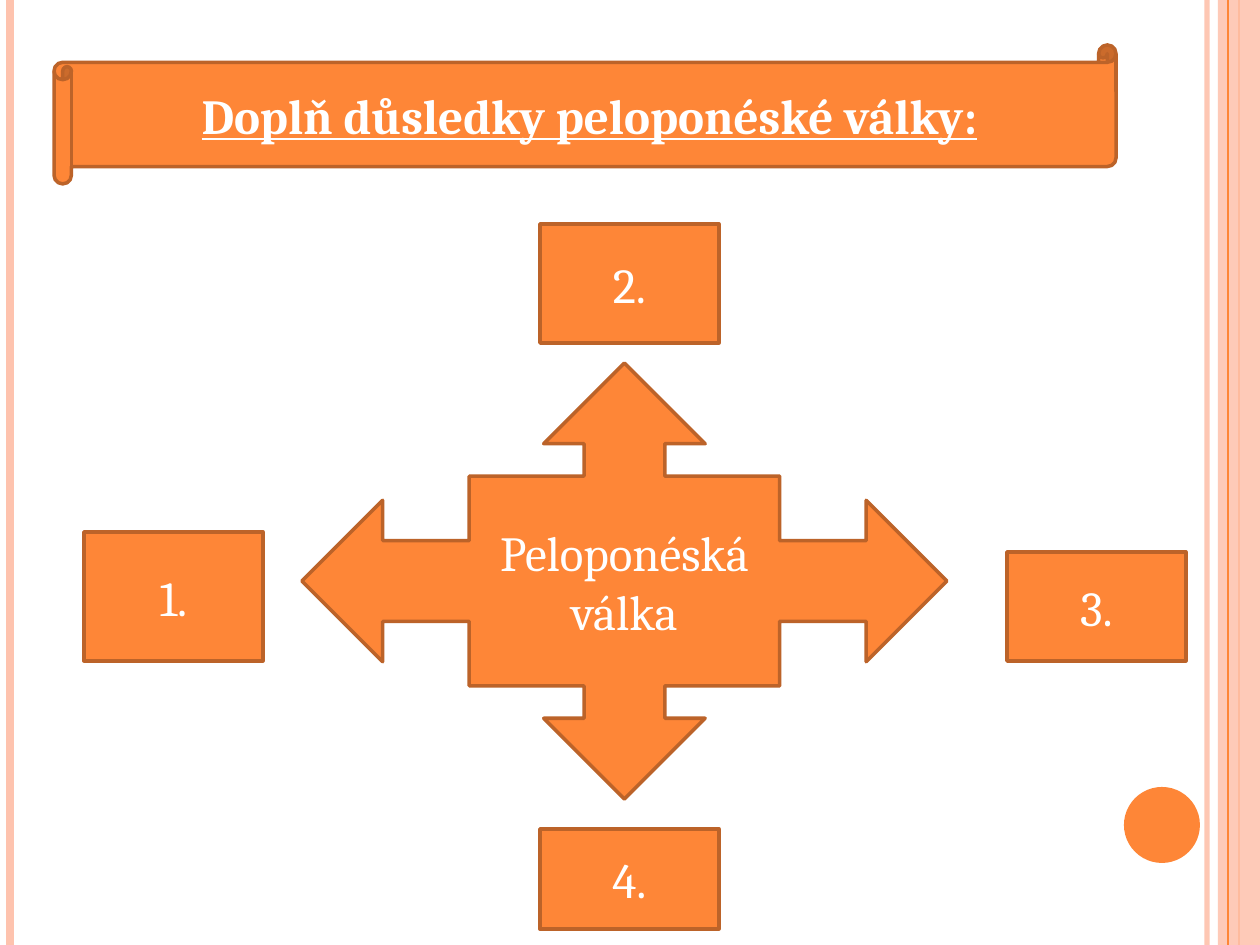
from lxml import etree
from pptx import Presentation, util as u
from pptx.dml.color import RGBColor
from pptx.enum import shapes as s, text as t
from pptx.oxml.ns import qn

PX = 914400 / 126
WIDE, HIGH = 1260, 945
ORANGE = RGBColor(0xFE, 0x86, 0x37)
BROWN = RGBColor(0xBC, 0x63, 0x29)
PEACH = RGBColor(0xFE, 0xC3, 0xAE)
WHITE = RGBColor(0xFF, 0xFF, 0xFF)
KIND = s.MSO_SHAPE

deck = Presentation()
deck.slide_width, deck.slide_height = round(WIDE * PX), round(HIGH * PX)
slide = deck.slides.add_slide(deck.slide_layouts[6])


def shape(kind, box, fill):
    item = slide.shapes.add_shape(kind, *[round(n * PX) for n in box])
    item.shadow.inherit = False
    item.fill.solid()
    item.fill.fore_color.rgb = fill
    item.line.fill.background()
    return item


def fade(part, cent):
    color = next(part.iter(qn("a:srgbClr")))
    etree.SubElement(color, qn("a:alpha")).set("val", str(cent * 1000))


# Side stripes, back to front, with the band between the lines
for x, color, size, cent in [
    (1207, PEACH, 3, 93),
    (10, PEACH, 4.5, 100),
    (1239, ORANGE, 1.5, 100),
    (1228, ORANGE, 0.75, 100),
]:
    if x == 1228:
        band = shape(KIND.RECTANGLE, (1218, 0, 42, HIGH), PEACH)
        fade(band.fill._xPr, 87)
    left = round(x * PX)
    line = slide.shapes.add_connector(
        s.MSO_CONNECTOR.STRAIGHT, left, 0, left, deck.slide_height)
    line.line.color.rgb = color
    line.line.width = u.Pt(size)
    props = line._element.spPr
    if cent < 100:
        fade(props, cent)
    etree.SubElement(props, qn("a:effectLst"))

# Corner dot
shape(KIND.OVAL, (1124, 787, 76, 76), ORANGE)

# Title scroll, central arrows and numbered boxes
for kind, box, words, head in [
    (KIND.HORIZONTAL_SCROLL, (54, 45, 1062, 139),
     "Doplň důsledky peloponéské války:", True),
    (KIND.QUAD_ARROW_CALLOUT, (302, 363, 645, 436), "Peloponéská válka", False),
    (KIND.RECTANGLE, (84, 532, 179, 129), "1.", False),
    (KIND.RECTANGLE, (540, 224, 179, 119), "2.", False),
    (KIND.RECTANGLE, (1007, 552, 179, 109), "3.", False),
    (KIND.RECTANGLE, (540, 829, 179, 100), "4.", False),
]:
    item = shape(kind, box, ORANGE)
    item.line.color.rgb = BROWN
    item.line.width = u.Pt(2)
    frame = item.text_frame
    frame.word_wrap = True
    frame.vertical_anchor = t.MSO_ANCHOR.MIDDLE
    para = frame.paragraphs[0]
    para.alignment = t.PP_ALIGN.CENTER
    run = para.add_run()
    run.text = words
    font = run.font
    font.name, font.size = "Cambria", u.Pt(28)
    font.color.rgb = WHITE
    if head:
        font.bold = font.underline = True

deck.save("out.pptx")
